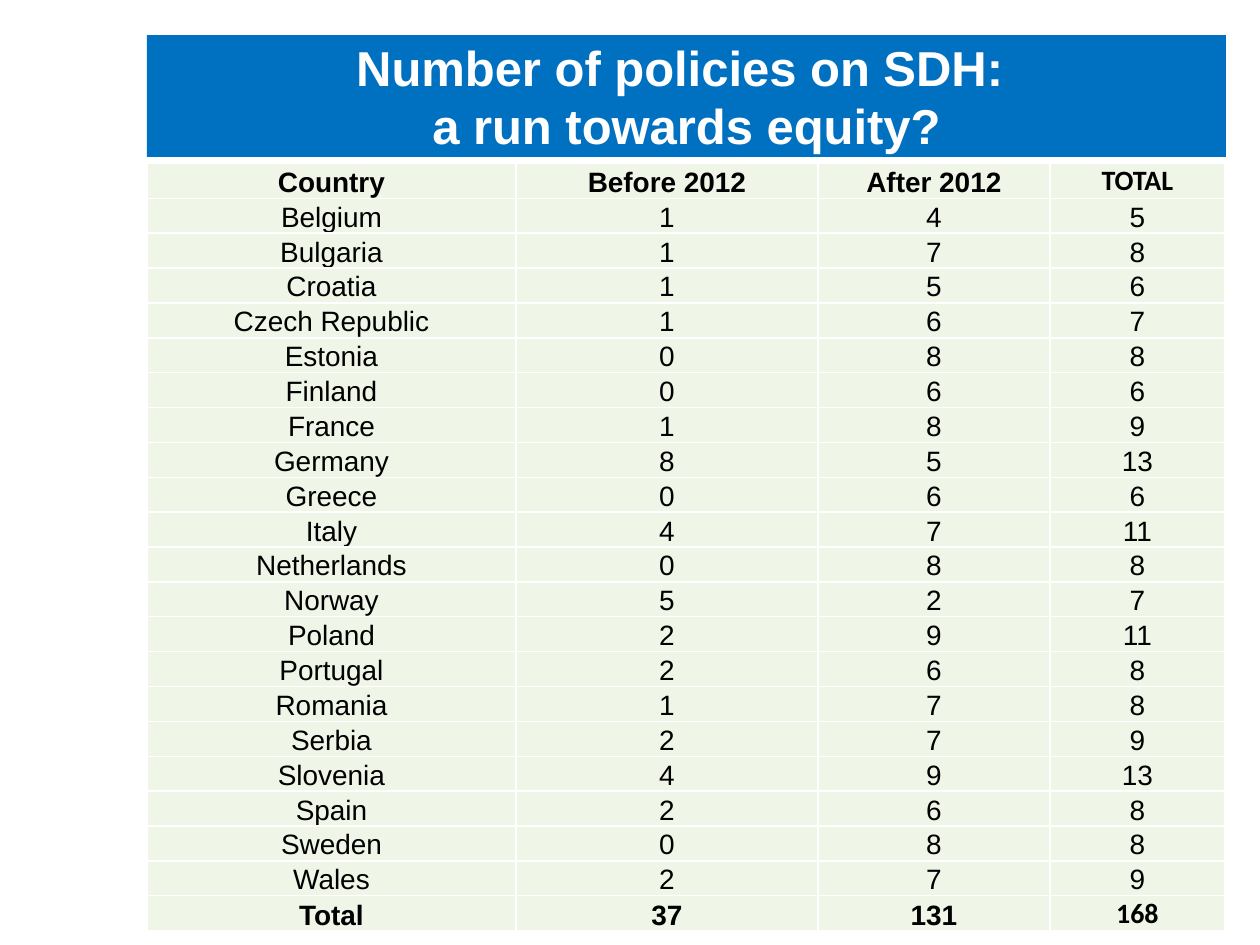
from lxml import etree
from pptx import Presentation
from pptx.dml.color import RGBColor
from pptx.enum import text
from pptx.oxml.ns import qn
from pptx.util import Pt

PX = 914400 / 126
HUE = {"bar": "0070C0", "cell": "EFF6E8", "ink": "000000", "white": "FFFFFF"}
COLS = (369, 302, 232, 175)
HEAD = ("Country", "Before 2012", "After 2012", "TOTAL")
COUNTS = (
    ("Belgium", 1, 4), ("Bulgaria", 1, 7), ("Croatia", 1, 5),
    ("Czech Republic", 1, 6), ("Estonia", 0, 8), ("Finland", 0, 6),
    ("France", 1, 8), ("Germany", 8, 5), ("Greece", 0, 6),
    ("Italy", 4, 7), ("Netherlands", 0, 8), ("Norway", 5, 2),
    ("Poland", 2, 9), ("Portugal", 2, 6), ("Romania", 1, 7),
    ("Serbia", 2, 7), ("Slovenia", 4, 9), ("Spain", 2, 6),
    ("Sweden", 0, 8), ("Wales", 2, 7),
)


def emu(px):
    return round(px * PX)


def paint(fill, hue):
    fill.solid()
    fill.fore_color.rgb = RGBColor.from_string(HUE[hue])


def style(par, size, hue, bold, face="Arial"):
    par.alignment = text.PP_ALIGN.CENTER
    for run in par.runs:
        font = run.font
        font.name, font.size, font.bold = face, Pt(size), bold
        font.color.rgb = RGBColor.from_string(HUE[hue])


def rule(cell):
    """Draw a thin white line on all four sides of a cell."""
    props = cell._tc.get_or_add_tcPr()
    for i, side in enumerate(("lnL", "lnR", "lnT", "lnB")):
        line = etree.Element(qn("a:" + side), w=str(Pt(1)))
        fill = etree.SubElement(line, qn("a:solidFill"))
        etree.SubElement(fill, qn("a:srgbClr"), val=HUE["white"])
        props.insert(i, line)


def banner(slide, x, y, w, h):
    title = slide.shapes.title
    title.left, title.top, title.width, title.height = map(emu, (x, y, w, h))
    paint(title.fill, "bar")
    frame = title.text_frame
    frame.text = "Number of policies on SDH: \va run towards equity?"
    frame.auto_size = text.MSO_AUTO_SIZE.NONE
    frame.vertical_anchor = text.MSO_ANCHOR.MIDDLE
    style(frame.paragraphs[0], 28, "white", True)


def grid(slide, x, y, w, h):
    # Totals follow from the counts
    body = [(name, old, new, old + new) for name, old, new in COUNTS]
    sums = [sum(col) for col in list(zip(*body))[1:]]
    data = [HEAD, *body, ("Total", *sums)]
    last = len(data) - 1

    table = slide.shapes.add_table(
        len(data), len(COLS), *map(emu, (x, y, w, h))).table
    table.first_row = table.horz_banding = False
    for col, wide in zip(table.columns, COLS):
        col.width = emu(wide)

    for r, values in enumerate(data):
        table.rows[r].height = emu(h / len(data))
        bold = r in (0, last)
        for c, value in enumerate(values):
            cell = table.cell(r, c)
            cell.text = str(value)
            cell.vertical_anchor = text.MSO_ANCHOR.BOTTOM
            cell.margin_left = cell.margin_right = cell.margin_top = emu(1)
            cell.margin_bottom = 0
            paint(cell.fill, "cell")
            rule(cell)
            face = "Calibri" if bold and c == 3 else "Arial"
            style(cell.text_frame.paragraphs[0], 16, "ink", bold, face)


def main():
    deck = Presentation()
    deck.slide_width, deck.slide_height = emu(1260), emu(945)
    slide = deck.slides.add_slide(deck.slide_layouts[5])
    banner(slide, 147, 35, 1079, 122)
    grid(slide, 147, 163, sum(COLS), 768)
    deck.save("out.pptx")


if __name__ == "__main__":
    main()
